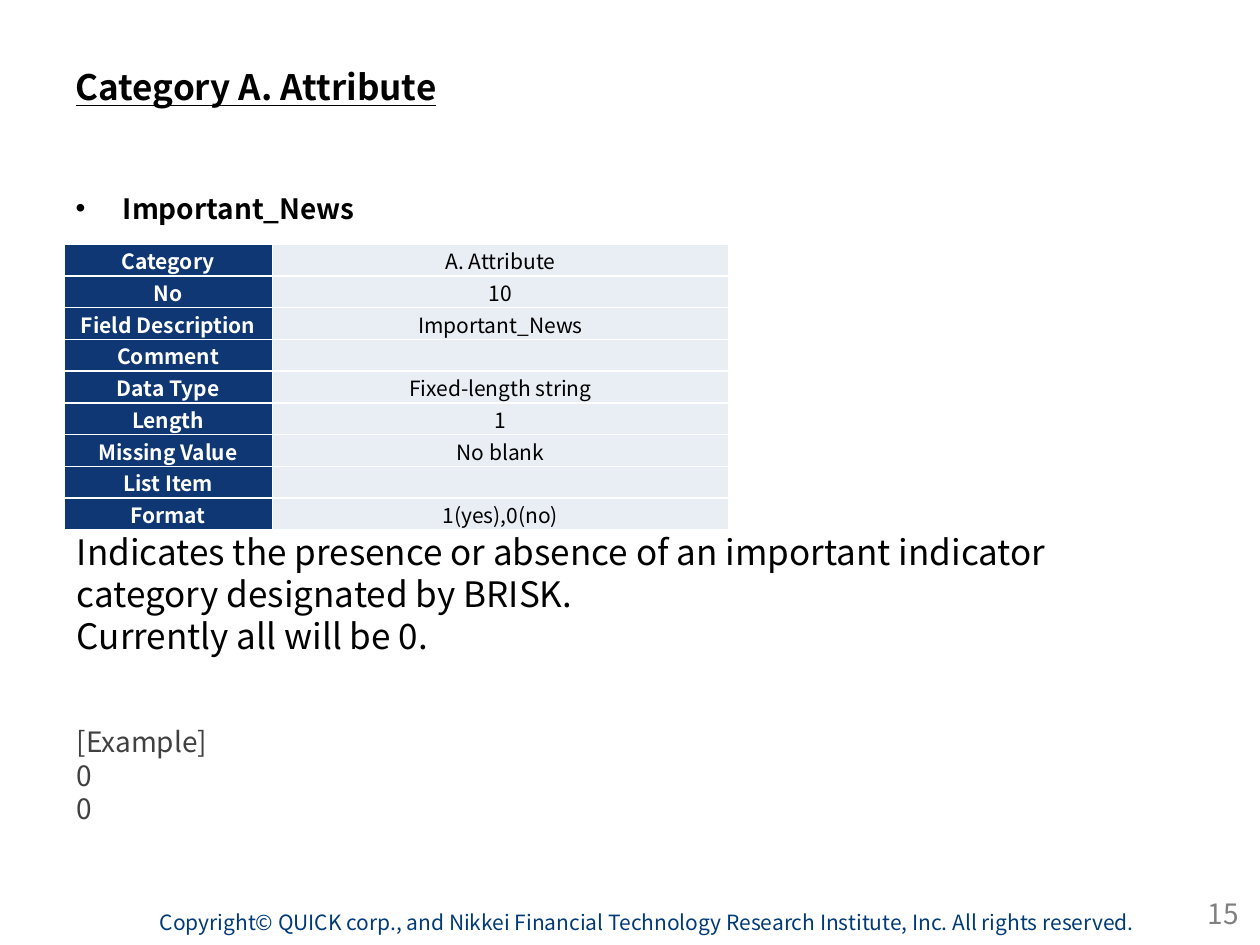
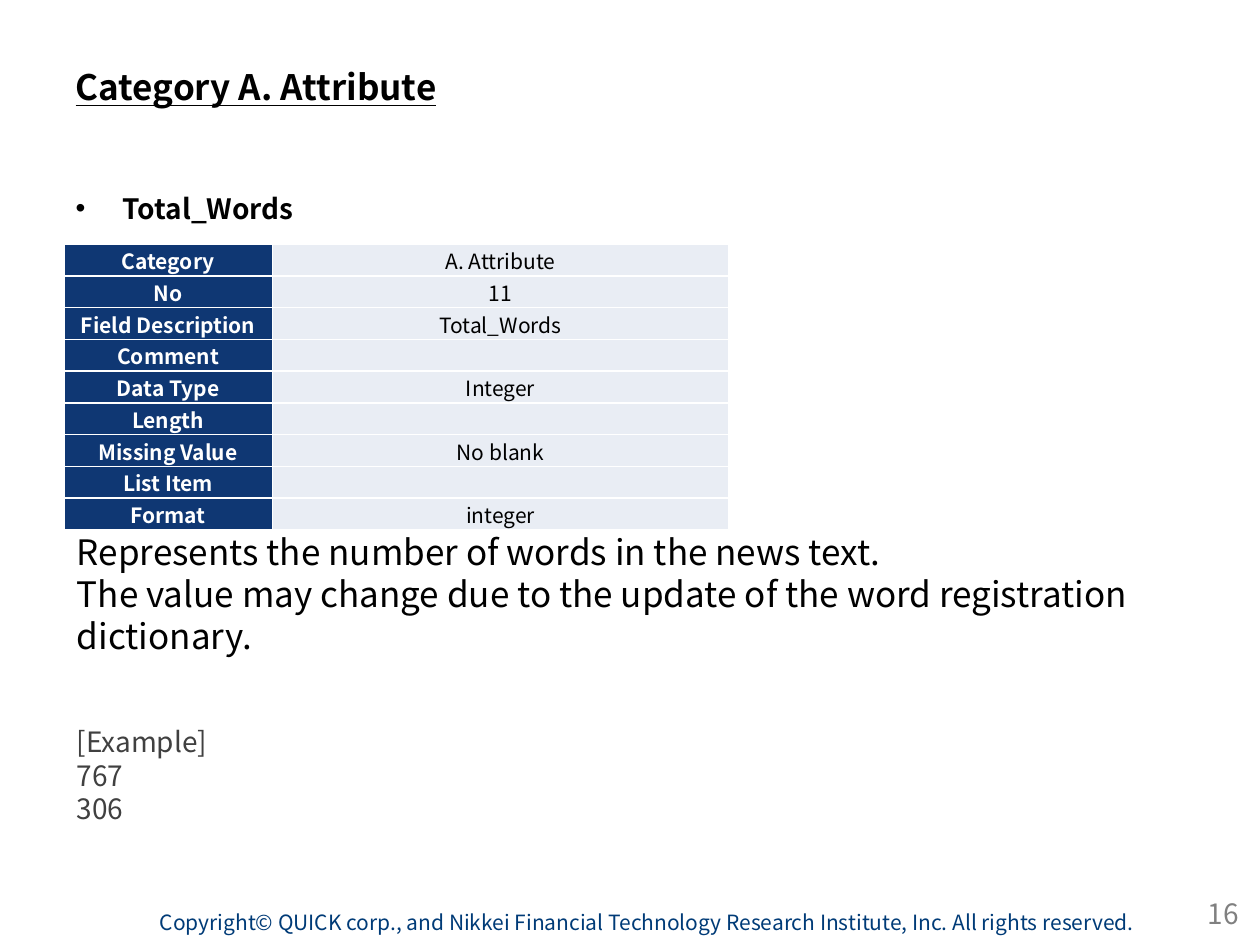
"""Builds two data dictionary slides, one per news field."""
from lxml import etree
from pptx import Presentation
from pptx.dml.color import RGBColor
from pptx.enum.text import MSO_ANCHOR, PP_ALIGN
from pptx.oxml.ns import qn
from pptx.util import Cm, Pt

FONT = "Noto Sans CJK JP"
BLACK = RGBColor(0x00, 0x00, 0x00)
WHITE = RGBColor(0xFF, 0xFF, 0xFF)
NAVY = RGBColor(0x0F, 0x37, 0x73)
PALE = RGBColor(0xE9, 0xED, 0xF4)
BLUE = RGBColor(0x00, 0x3B, 0x77)
DARK_GRAY = RGBColor(0x40, 0x40, 0x40)
GRAY = RGBColor(0x80, 0x80, 0x80)

TITLE = "Category A. Attribute"
COPYRIGHT = ("Copyright© QUICK corp., and Nikkei Financial Technology "
             "Research Institute, Inc. All rights reserved.")
LABELS = ["Category", "No", "Field Description", "Comment", "Data Type",
          "Length", "Missing Value", "List Item", "Format"]
FIELDS = [
    {"page": "15", "name": "Important_News",
     "values": ["A. Attribute", "10", "Important_News", "",
                "Fixed-length string", "1", "No blank", "", "1(yes),0(no)"],
     "notes": ["Indicates the presence or absence of an important indicator "
               "category designated by BRISK.",
               "Currently all will be 0."],
     "examples": ["0", "0"]},
    {"page": "16", "name": "Total_Words",
     "values": ["A. Attribute", "11", "Total_Words", "",
                "Integer", "", "No blank", "", "integer"],
     "notes": ["Represents the number of words in the news text.",
               "The value may change due to the update of the word "
               "registration dictionary."],
     "examples": ["767", "306"]},
]


def style(p, size, color, bold=False, underline=False):
    for r in p.runs:
        r.font.name = FONT
        r.font.size = Pt(size)
        r.font.bold = bold
        r.font.underline = underline
        r.font.color.rgb = color


def fill_cell(cell, text, fill, color, bold):
    cell.fill.solid()
    cell.fill.fore_color.rgb = fill
    cell.vertical_anchor = MSO_ANCHOR.MIDDLE
    cell.margin_left = cell.margin_right = cell.margin_top = Cm(0.02)
    cell.margin_bottom = 0
    p = cell.text_frame.paragraphs[0]
    p.text = text
    p.alignment = PP_ALIGN.CENTER
    style(p, 12, color, bold)
    if not text:
        etree.SubElement(p._p, qn("a:endParaRPr"), sz="1200")
    props = cell._tc.get_or_add_tcPr()
    for i, side in enumerate(("a:lnL", "a:lnR", "a:lnT", "a:lnB")):
        line = etree.Element(qn(side), w=str(Pt(1)))
        solid = etree.SubElement(line, qn("a:solidFill"))
        etree.SubElement(solid, qn("a:srgbClr"), val=str(WHITE))
        props.insert(i, line)


prs = Presentation()
prs.slide_width, prs.slide_height = Cm(25.4), Cm(19.05)

for field in FIELDS:
    s = prs.slides.add_slide(prs.slide_layouts[1])

    sp = s.shapes.add_textbox(Cm(3.22), Cm(18.34), Cm(19.96), Cm(0.51))
    sp.fill.solid()
    sp.fill.fore_color.rgb = WHITE
    tf = sp.text_frame
    tf.margin_left = tf.margin_right = tf.margin_top = tf.margin_bottom = 0
    tf.word_wrap = True
    tf.text = COPYRIGHT
    style(tf.paragraphs[0], 12, BLUE)

    sp = s.shapes.title
    sp.left, sp.top, sp.width, sp.height = Cm(1.27), Cm(0.76), Cm(22.86), Cm(1.96)
    tf = sp.text_frame
    tf.vertical_anchor = MSO_ANCHOR.MIDDLE
    tf.text = TITLE
    tf.paragraphs[0].alignment = PP_ALIGN.LEFT
    style(tf.paragraphs[0], 20, BLACK, bold=True, underline=True)

    sp = s.placeholders[1]
    sp.left, sp.top, sp.width, sp.height = Cm(1.27), Cm(3.73), Cm(22.86), Cm(13.59)
    tf = sp.text_frame
    tf.text = field["name"]
    tf.paragraphs[0].space_before = Pt(0)
    style(tf.paragraphs[0], 16, BLACK, bold=True)

    row_height = Cm(0.64)
    table = s.shapes.add_table(len(LABELS), 2, Cm(1.29), Cm(4.92), Cm(13.4),
                               row_height * len(LABELS)).table
    table.first_row = table.horz_banding = False
    table.columns[0].width, table.columns[1].width = Cm(4.2), Cm(9.2)
    for row, label, value in zip(table.rows, LABELS, field["values"]):
        row.height = row_height
        fill_cell(row.cells[0], label, NAVY, WHITE, True)
        fill_cell(row.cells[1], value, PALE, BLACK, False)

    sp = s.shapes.add_textbox(Cm(19.3), Cm(17.91), Cm(5.92), Cm(1.02))
    tf = sp.text_frame
    tf.word_wrap = True
    tf.vertical_anchor = MSO_ANCHOR.MIDDLE
    tf.text = field["page"]
    tf.paragraphs[0].alignment = PP_ALIGN.RIGHT
    style(tf.paragraphs[0], 16, GRAY)

    sp = s.shapes.add_textbox(Cm(1.3), Cm(10.57), Cm(22.81), Cm(6.25))
    tf = sp.text_frame
    tf.word_wrap = True
    tf.text = "\n".join(field["notes"] + ["[Example]"] + field["examples"])
    example_start = len(field["notes"])
    for i, p in enumerate(tf.paragraphs):
        if i < example_start:
            style(p, 20, BLACK)
        else:
            style(p, 16, DARK_GRAY)
    tf.paragraphs[example_start].space_before = Pt(39)

prs.save("out.pptx")
